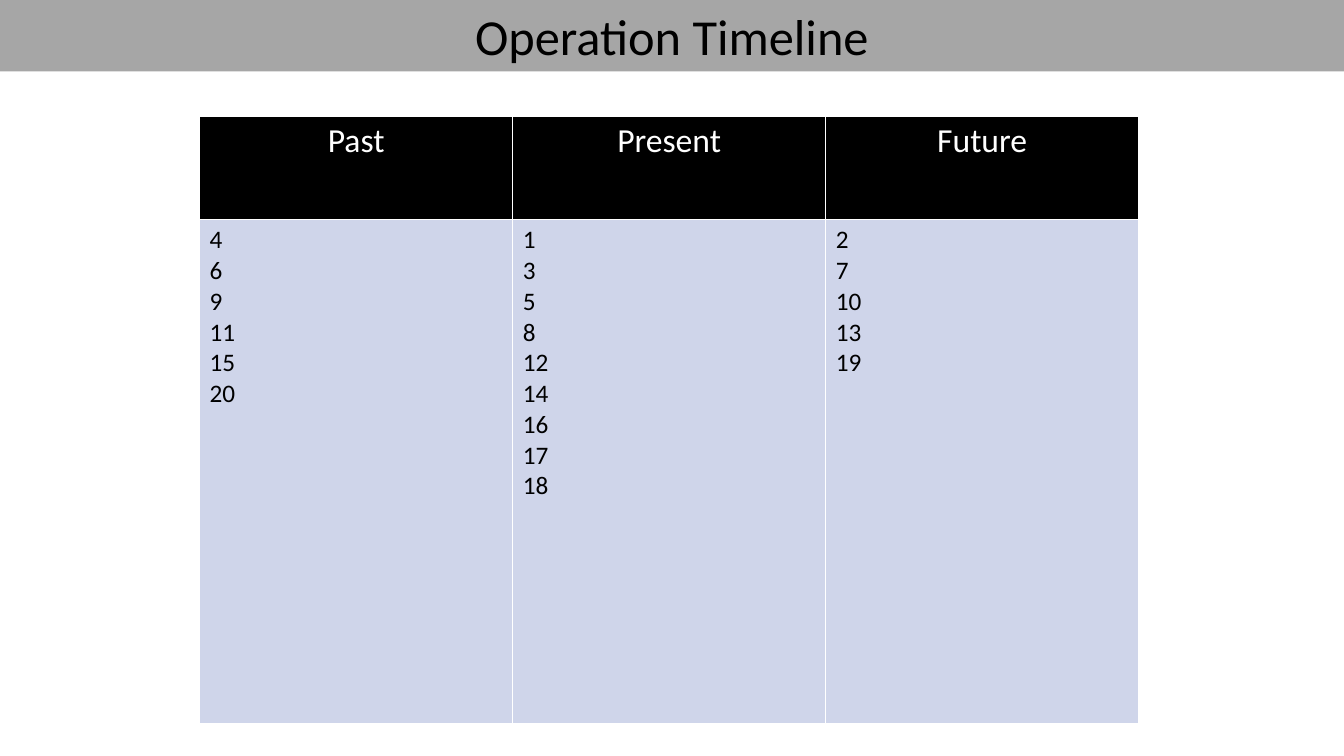
from dataclasses import dataclass

from pptx import Presentation
from pptx.dml.color import RGBColor
from pptx.enum import text
from pptx.util import Pt


@dataclass(frozen=True)
class Theme:
    font: str = "Calibri"
    banner: str = "A6A6A6"
    header: str = "000000"
    body: str = "CFD5EA"
    dark: str = "000000"
    light: str = "FFFFFF"
    title_size: int = 36
    header_size: int = 24
    body_size: int = 18


THEME = Theme()
SLIDE_WIDTH, SLIDE_HEIGHT = 960, 540
BANNER_HEIGHT = 51
TABLE_LEFT, TABLE_TOP = 142.6, 82.8
COLUMN_WIDTH = 223.6
ROW_HEIGHTS = (74.2, 360)
TENSES = {
    "Past": (4, 6, 9, 11, 15, 20),
    "Present": (1, 3, 5, 8, 12, 14, 16, 17, 18),
    "Future": (2, 7, 10, 13, 19),
}


def set_values(target, values):
    for name, value in values.items():
        setattr(target, name, value)


def fill_solid(target, color):
    target.fill.solid()
    target.fill.fore_color.rgb = RGBColor.from_string(color)


def write_lines(frame, lines, size, color, alignment):
    """Write each line as its own formatted paragraph."""
    frame.text = "\n".join(lines)
    for paragraph in frame.paragraphs:
        paragraph.alignment = alignment
        for run in paragraph.runs:
            set_values(run.font, {"name": THEME.font, "size": Pt(size), "bold": False})
            run.font.color.rgb = RGBColor.from_string(color)


def format_title(title, wording):
    set_values(title, {"left": Pt(0), "top": Pt(0),
                       "width": Pt(SLIDE_WIDTH), "height": Pt(BANNER_HEIGHT)})
    fill_solid(title, THEME.banner)
    write_lines(title.text_frame, [wording], THEME.title_size, THEME.dark,
                text.PP_ALIGN.CENTER)
    set_values(title.text_frame, {
        "word_wrap": True,
        "auto_size": text.MSO_AUTO_SIZE.NONE,
        "vertical_anchor": text.MSO_ANCHOR.TOP,
    })


def format_cell(cell, lines, size, color, alignment, fill):
    fill_solid(cell, fill)
    write_lines(cell.text_frame, lines, size, color, alignment)


def add_tense_table(slide):
    """Add one column per tense; the default table style draws the white rules."""
    table = slide.shapes.add_table(
        len(ROW_HEIGHTS), len(TENSES), Pt(TABLE_LEFT), Pt(TABLE_TOP),
        Pt(COLUMN_WIDTH * len(TENSES)), Pt(sum(ROW_HEIGHTS))).table
    for row, height in zip(table.rows, ROW_HEIGHTS):
        row.height = Pt(height)
    for index, (tense, numbers) in enumerate(TENSES.items()):
        table.columns[index].width = Pt(COLUMN_WIDTH)
        format_cell(table.cell(0, index), [tense], THEME.header_size, THEME.light,
                    text.PP_ALIGN.CENTER, THEME.header)
        format_cell(table.cell(1, index), map(str, numbers), THEME.body_size,
                    THEME.dark, text.PP_ALIGN.LEFT, THEME.body)


def main():
    presentation = Presentation()
    set_values(presentation, {"slide_width": Pt(SLIDE_WIDTH),
                              "slide_height": Pt(SLIDE_HEIGHT)})
    title_only = presentation.slide_layouts.get_by_name("Title Only")
    slide = presentation.slides.add_slide(title_only)
    format_title(slide.shapes.title, "Operation Timeline")
    add_tense_table(slide)
    presentation.save("out.pptx")


if __name__ == "__main__":
    main()
